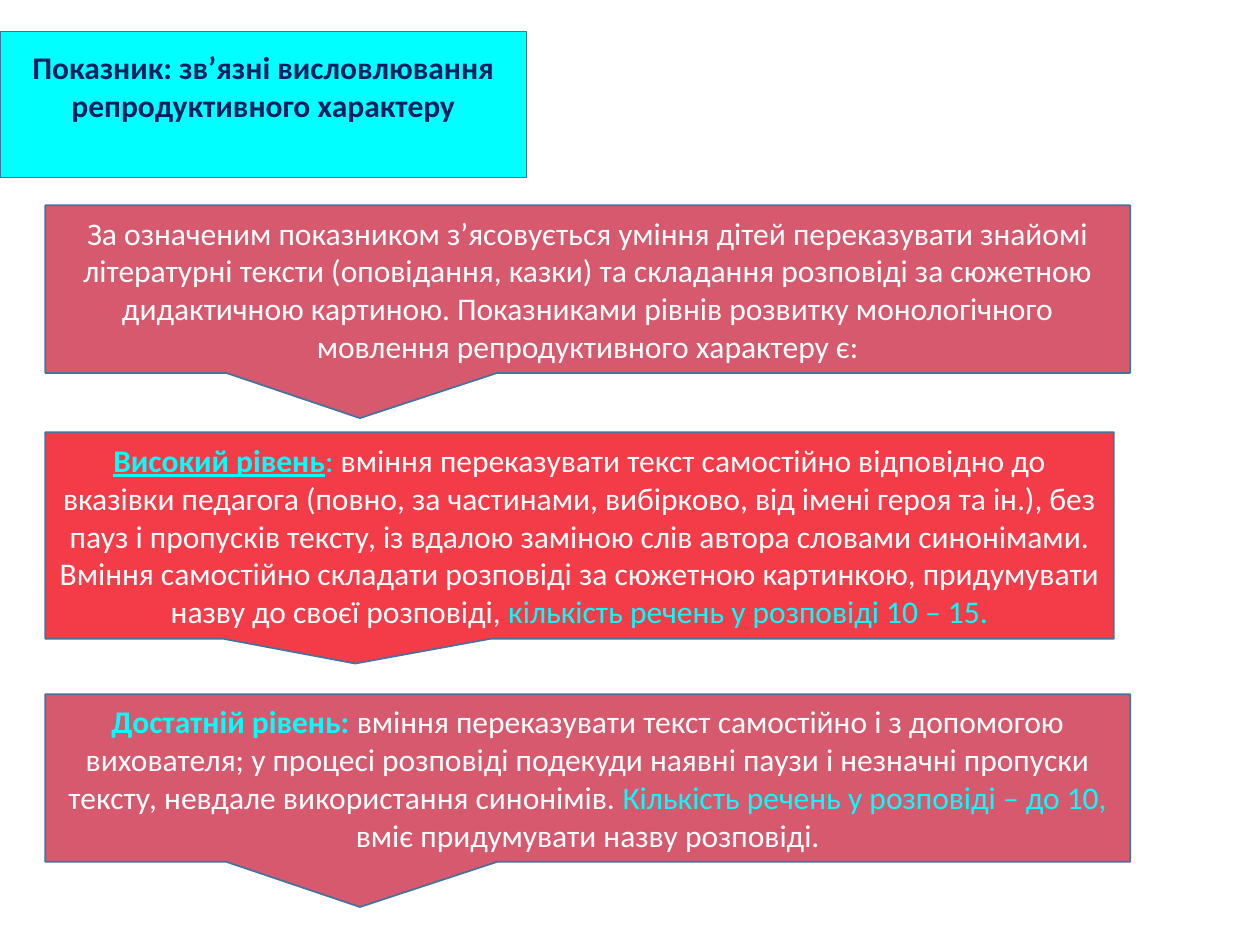
from pptx import Presentation, util as u
from pptx.dml.color import RGBColor
from pptx.enum import shapes, text

COLORS = {"cyan": "00FFFF", "navy": "002060", "white": "FFFFFF",
          "rose": "D7596E", "red": "F43C49", "outline": "43739E"}
WIDTH, HEIGHT = 10, 7.5
LEFT = 0.36
LONG_POINTER, SHORT_POINTER = (-0.21, 0.77), (-0.21, 0.62)

PLAIN = {"color": "white"}
ACCENT = {"color": "cyan"}
LEVEL = {"color": "cyan", "bold": True}

heading = [("Показник: зв’язні висловлювання репродуктивного характеру",
            {"color": "navy", "bold": True})]

levels = [
    {"top": 1.63, "size": (8.61, 1.33), "fill": "rose", "pointer": LONG_POINTER,
     "parts": [
         ("За означеним показником з’ясовується уміння дітей переказувати знайомі "
          "літературні тексти (оповідання, казки) та складання розповіді за сюжетною "
          "дидактичною картиною. Показниками рівнів розвитку монологічного мовлення "
          "репродуктивного характеру є:", PLAIN)]},
    {"top": 3.43, "size": (8.48, 1.64), "fill": "red", "pointer": SHORT_POINTER,
     "parts": [
         ("Високий рівень", {**LEVEL, "underline": True}),
         (": ", ACCENT),
         ("вміння переказувати текст самостійно відповідно до вказівки педагога "
          "(повно, за частинами, вибірково, від імені героя та ін.), без пауз і "
          "пропусків тексту, із вдалою заміною слів автора словами синонімами. "
          "Вміння самостійно складати розповіді за сюжетною картинкою, придумувати "
          "назву до своєї розповіді, ", PLAIN),
         ("кількість речень у розповіді 10 – 15.", ACCENT)]},
    {"top": 5.51, "size": (8.61, 1.33), "fill": "rose", "pointer": LONG_POINTER,
     "parts": [
         ("Достатній рівень: ", LEVEL),
         ("вміння переказувати текст самостійно і з допомогою вихователя; у процесі "
          "розповіді подекуди наявні паузи і незначні пропуски тексту, невдале "
          "використання синонімів. ", PLAIN),
         ("Кількість речень у розповіді – до 10, ", ACCENT),
         ("вміє придумувати назву розповіді.", PLAIN)]},
]


def rgb(name):
    return RGBColor.from_string(COLORS[name])


def write(paragraph, words, color, bold=False, underline=False, size=18):
    run = paragraph.add_run()
    run.text = words
    run.font.name = "Calibri"
    run.font.size = u.Pt(size)
    run.font.bold = bold
    run.font.underline = underline
    run.font.color.rgb = rgb(color)


def add_panel(slide, preset, left, top, size, fill, parts, bottom_inset=0.05):
    panel = slide.shapes.add_shape(
        preset, *(u.Inches(length) for length in (left, top, *size)))
    panel.shadow.inherit = False
    panel.fill.solid()
    panel.fill.fore_color.rgb = rgb(fill)
    panel.line.color.rgb = rgb("outline")
    panel.line.width = u.Pt(1)
    frame = panel.text_frame
    frame.word_wrap = True
    frame.vertical_anchor = text.MSO_ANCHOR.MIDDLE
    frame.margin_bottom = u.Inches(bottom_inset)
    paragraph = frame.paragraphs[0]
    paragraph.alignment = text.PP_ALIGN.CENTER
    for words, style in parts:
        write(paragraph, words, **style)
    return panel


def main():
    deck = Presentation()
    deck.slide_width, deck.slide_height = u.Inches(WIDTH), u.Inches(HEIGHT)
    slide = deck.slides.add_slide(deck.slide_layouts[6])

    add_panel(slide, shapes.MSO_SHAPE.RECTANGLE, 0, 0.25, (4.18, 1.16),
              "cyan", heading, bottom_inset=0.35)
    for level in levels:
        callout = add_panel(slide, shapes.MSO_SHAPE.RECTANGULAR_CALLOUT, LEFT,
                            level["top"], level["size"], level["fill"], level["parts"])
        callout.adjustments[0], callout.adjustments[1] = level["pointer"]

    deck.save("out.pptx")


if __name__ == "__main__":
    main()
